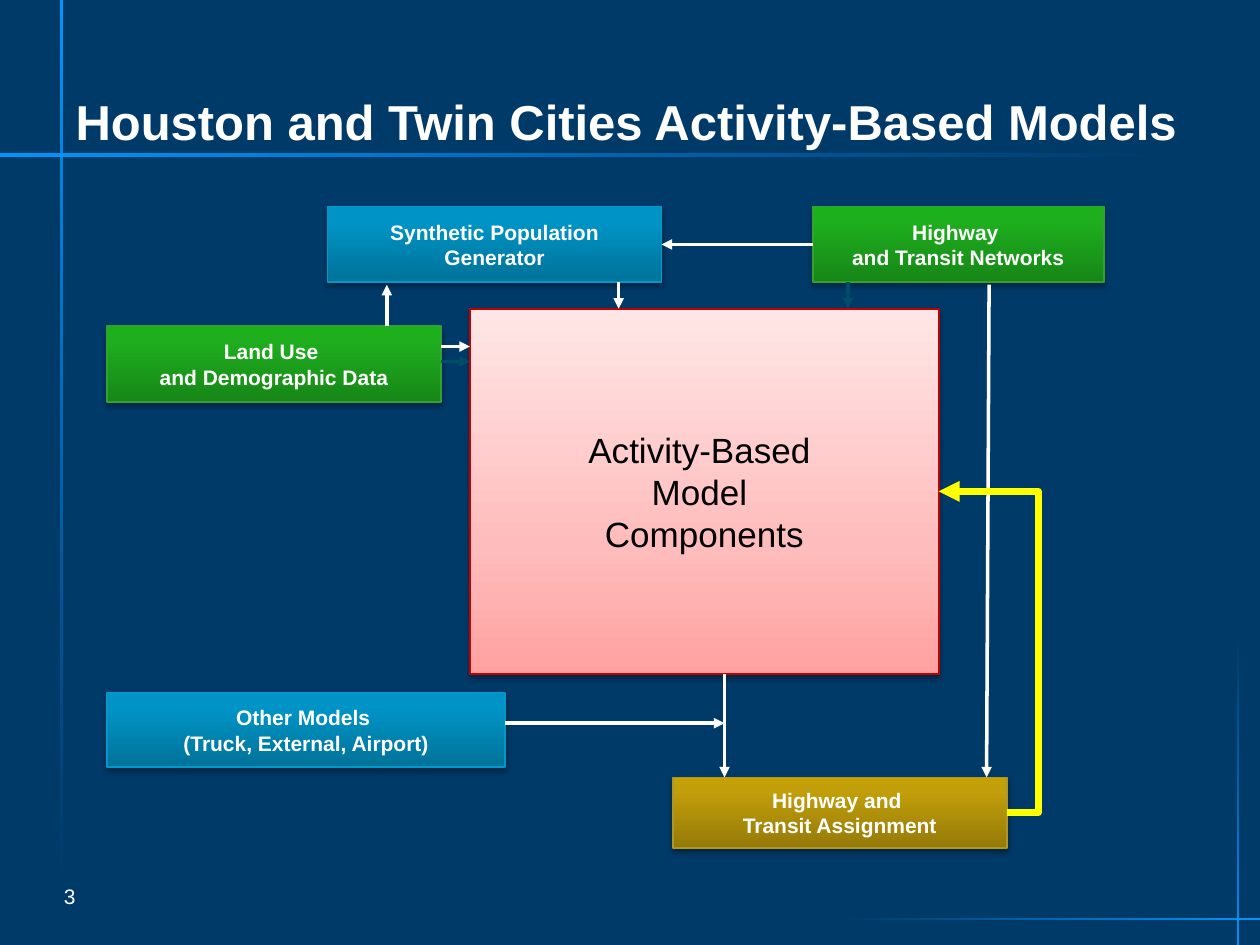
from lxml import etree
from pptx import Presentation
from pptx import util as u
from pptx.dml.color import RGBColor
from pptx.enum import shapes, text
from pptx.oxml import ns

NAVY = RGBColor(0x00, 0x3A, 0x69)
WHITE = RGBColor(0xFF, 0xFF, 0xFF)
BLACK = RGBColor(0x00, 0x00, 0x00)
TEAL = RGBColor(0x00, 0x4D, 0x66)
YELLOW = RGBColor(0xFF, 0xFF, 0x00)
GLOW = RGBColor(0x00, 0x99, 0xFF)
GLOW_END = RGBColor(0x0C, 0x92, 0xFF)
GREEN_LINE = RGBColor(0x30, 0xA2, 0x30)
BLUE_LINE = RGBColor(0x00, 0x99, 0xCC)
GOLD_LINE = RGBColor(0xB2, 0x96, 0x20)
RED_LINE = RGBColor(0xC2, 0x00, 0x00)
GREEN = [(0, RGBColor(0x17, 0x86, 0x17)), (80, RGBColor(0x1E, 0xAE, 0x1E)),
         (100, RGBColor(0x1B, 0xB1, 0x1B))]
BLUE = [(0, RGBColor(0x00, 0x72, 0x98)), (80, RGBColor(0x00, 0x94, 0xC6)),
        (100, RGBColor(0x00, 0x95, 0xC7))]
GOLD = [(0, RGBColor(0x95, 0x7A, 0x08)), (80, RGBColor(0xC2, 0x9E, 0x0A)),
        (100, RGBColor(0xC6, 0xA1, 0x06))]
PINK = [(0, RGBColor(0xFF, 0xA1, 0xA1)), (35, RGBColor(0xFF, 0xBC, 0xBC)),
        (100, RGBColor(0xFF, 0xE6, 0xE6))]


def add_element(parent, tag, **attributes):
    return etree.SubElement(parent, ns.qn(tag), attributes)


def add_color(parent, color, opacity=100):
    element = add_element(parent, "a:srgbClr", val=str(color))
    if opacity < 100:
        add_element(element, "a:alpha", val=str(opacity * 1000))


def fill_gradient(shape, stops, angle, last_opacity=100):
    shape.fill.gradient()
    shape.fill.gradient_angle = angle
    stop_list = shape._element.spPr.find(".//" + ns.qn("a:gsLst"))
    for stop in list(stop_list):
        stop_list.remove(stop)
    for position, color in stops:
        stop = add_element(stop_list, "a:gs", pos=str(position * 1000))
        add_color(stop, color, last_opacity if position == 100 else 100)


def add_run(paragraph, words, size, color, bold=False):
    run = paragraph.add_run()
    run.text = words
    run.font.name = "Arial"
    run.font.size = u.Pt(size)
    run.font.bold = bold
    run.font.color.rgb = color


def add_rectangle(slide, box):
    shape = slide.shapes.add_shape(
        shapes.MSO_SHAPE.RECTANGLE, *[u.Inches(value) for value in box])
    shape.shadow.inherit = False
    return shape


def add_glow_bar(slide, box, rotation):
    bar = add_rectangle(slide, box)
    bar.rotation = rotation
    bar.line.fill.background()
    fill_gradient(bar, [(0, GLOW), (100, GLOW_END)], 270, last_opacity=0)


def add_box(slide, box, lines, stops, outline, size=12, color=WHITE, bold=True):
    shape = add_rectangle(slide, box)
    fill_gradient(shape, stops, 90)
    shape.line.color.rgb = outline
    shape.line.width = u.Pt(1)
    effects = shape._element.spPr.find(ns.qn("a:effectLst"))
    shadow = add_element(effects, "a:outerShdw", blurRad=str(u.Pt(3.1)),
                         dist=str(u.Pt(1.8)), dir="5400000", rotWithShape="0")
    add_color(shadow, BLACK, 35)
    frame = shape.text_frame
    frame.margin_left = frame.margin_right = frame.margin_top = frame.margin_bottom = 0
    frame.vertical_anchor = text.MSO_ANCHOR.MIDDLE
    paragraph = frame.paragraphs[0]
    paragraph.alignment = text.PP_ALIGN.CENTER
    for index, line in enumerate(lines):
        if index:
            paragraph.add_line_break()
        add_run(paragraph, line, size, color, bold)
    return shape


def add_arrow(slide, start, end, color=WHITE, width=2,
              kind=shapes.MSO_CONNECTOR.STRAIGHT):
    arrow = slide.shapes.add_connector(
        kind, *[u.Inches(value) for value in (*start, *end)])
    arrow.line.color.rgb = color
    arrow.line.width = u.Pt(width)
    add_element(arrow.line._get_or_add_ln(), "a:tailEnd", type="triangle")
    add_element(arrow._element.spPr, "a:effectLst")
    return arrow


def build_title(slide, box, words):
    title = slide.shapes.title
    title.left, title.top, title.width, title.height = [u.Inches(value) for value in box]
    frame = title.text_frame
    frame.auto_size = text.MSO_AUTO_SIZE.NONE
    frame.vertical_anchor = text.MSO_ANCHOR.BOTTOM
    frame.paragraphs[0].alignment = text.PP_ALIGN.LEFT
    add_run(frame.paragraphs[0], words, 28, WHITE, True)


def build_page_number(slide, box, number):
    label = slide.shapes.add_textbox(*[u.Inches(value) for value in box])
    frame = label.text_frame
    frame.word_wrap = True
    frame.vertical_anchor = text.MSO_ANCHOR.MIDDLE
    add_run(frame.paragraphs[0], number, 12, WHITE)


def build_frame(slide):
    for box, rotation in [((4.52, -3.47, 0.02, 9.4), 270),
                          ((0.48, -0.09, 0.02, 7.07), 0),
                          ((8.38, 5.62, 0.01, 3.35), 90),
                          ((9.82, 5.04, 0.01, 2.64), 180)]:
        add_glow_bar(slide, box, rotation)


def build_flowchart(slide, box):
    left, top, width, height = box
    right, bottom = left + width, top + height
    box_width, box_height = 2.65, 0.6
    main_left, main_top, main_width, main_height = left + 2.88, top + 0.81, 3.72, 2.9
    main_right, main_bottom = main_left + main_width, main_top + main_height
    row_bottom = top + box_height
    land_top, other_top, assignment_top = top + 0.95, top + 3.86, bottom - 0.56
    assignment_left = left + 4.49

    add_box(slide, (left, land_top, box_width, box_height),
            ["Land Use ", "and Demographic Data"], GREEN, GREEN_LINE)
    population = add_box(slide, (left + 1.75, top, box_width, box_height),
                         ["Synthetic Population", "Generator"], BLUE, BLUE_LINE)
    assignment = add_box(slide, (assignment_left, assignment_top, box_width, 0.56),
                         ["Highway and ", "Transit Assignment"], GOLD, GOLD_LINE)
    networks = add_box(slide, (right - 2.31, top, 2.31, box_height),
                       ["Highway ", "and Transit Networks"], GREEN, GREEN_LINE)
    add_box(slide, (left, other_top, 3.16, 0.59),
            ["Other Models ", "(Truck, External, Airport)"], BLUE, BLUE_LINE)
    components = add_box(slide, (main_left, main_top, main_width, main_height),
                         ["Activity-Based ", "Model ", "Components"],
                         PINK, RED_LINE, 20, BLACK, False)

    add_arrow(slide, (7.85, row_bottom + 0.02), (7.83, assignment_top))
    add_arrow(slide, (4.91, row_bottom), (4.91, main_top))
    add_arrow(slide, (6.73, row_bottom), (6.73, main_top), TEAL)
    add_arrow(slide, (3.07, land_top), (3.07, row_bottom + 0.02))
    add_arrow(slide, (left + box_width, 2.75), (main_left, 2.75))
    add_arrow(slide, (left + box_width, 2.87), (main_left, 2.87), TEAL)
    add_arrow(slide, (5.75, main_bottom), (5.75, assignment_top))
    add_arrow(slide, (left + 3.16, 5.74), (5.75, 5.74))

    supply = add_arrow(slide, (right - 2.31, 1.94), (5.25, 1.94))
    supply.begin_connect(networks, 1)
    supply.end_connect(population, 3)
    feedback = add_arrow(slide, (assignment_left + box_width, 6.45), (main_right, 3.9),
                         YELLOW, 4, shapes.MSO_CONNECTOR.ELBOW)
    feedback.begin_connect(assignment, 3)
    feedback.end_connect(components, 3)
    guides = feedback._element.spPr.find(".//" + ns.qn("a:avLst"))
    add_element(guides, "a:gd", name="adj1", fmla="val -46300")


def main():
    presentation = Presentation()
    presentation.slide_width, presentation.slide_height = u.Inches(10), u.Inches(7.5)
    slide = presentation.slides.add_slide(presentation.slide_layouts[5])
    slide.background.fill.solid()
    slide.background.fill.fore_color.rgb = NAVY
    build_frame(slide)
    build_title(slide, (0.5, -0.01, 9, 1.25),
                "Houston and Twin Cities Activity-Based Models")
    build_page_number(slide, (0.41, 6.91, 0.73, 0.4), "3")
    build_flowchart(slide, (0.85, 1.64, 7.91, 5.09))
    presentation.save("out.pptx")


if __name__ == "__main__":
    main()
